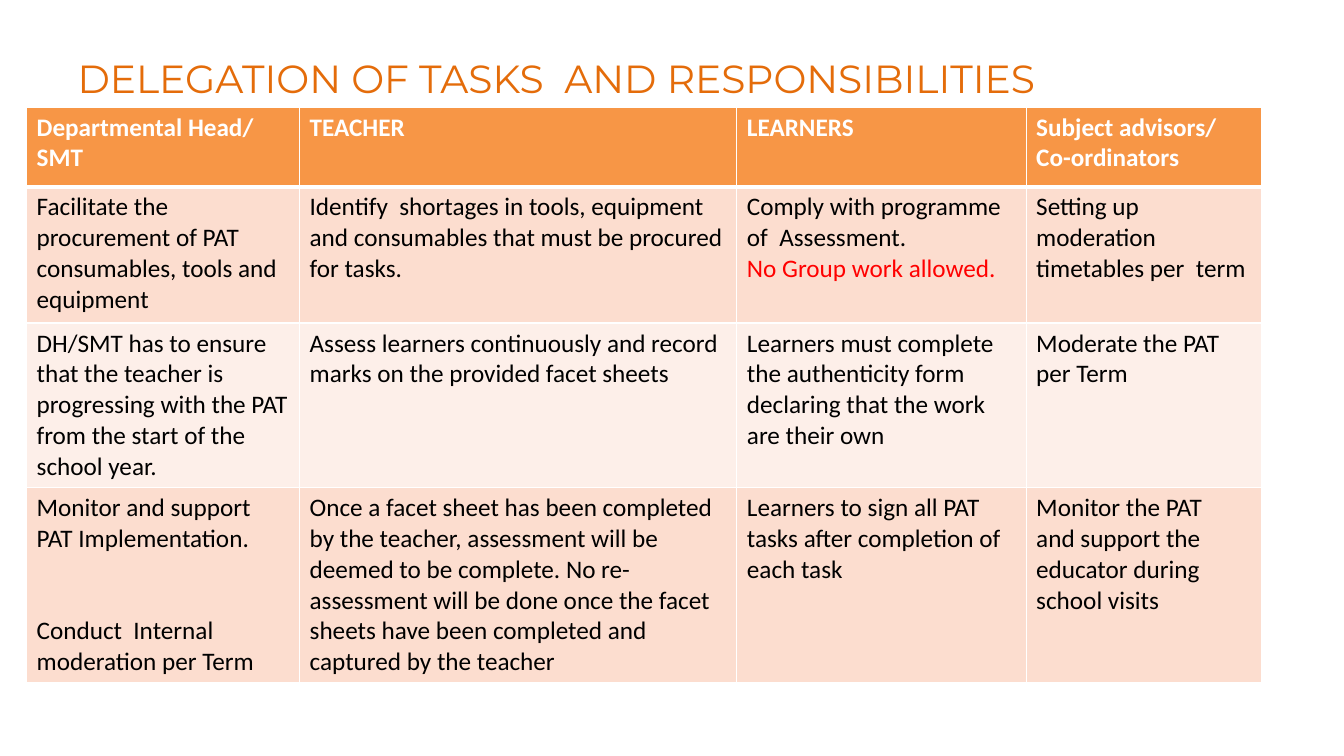
from lxml.etree import SubElement
from pptx import Presentation
from pptx.dml.color import RGBColor
from pptx.enum.text import MSO_ANCHOR, PP_ALIGN
from pptx.oxml.ns import qn
from pptx.util import Cm, Pt

WHITE = RGBColor(0xFF, 0xFF, 0xFF)
BLACK = RGBColor(0, 0, 0)
RED = RGBColor(0xFF, 0, 0)
TITLE_ORANGE = RGBColor(0xE4, 0x6C, 0x0A)
HEADER_ORANGE = RGBColor(0xF7, 0x96, 0x46)
BAND_DARK = RGBColor(0xFC, 0xDD, 0xCF)
BAND_LIGHT = RGBColor(0xFD, 0xEF, 0xE9)

WARNING = "No Group work allowed."
INTERNAL = "Conduct  Internal moderation per Term"
HEADERS = ["Departmental Head/ SMT", "TEACHER", "LEARNERS",
           "Subject advisors/ Co-ordinators"]
TASKS = [
    ["Facilitate the procurement of PAT consumables, tools and equipment",
     "Identify  shortages in tools, equipment and consumables that must be "
     "procured for tasks.",
     "Comply with programme of  Assessment.\n" + WARNING,
     "Setting up moderation timetables per  term"],
    ["DH/SMT has to ensure that the teacher is progressing with the PAT from "
     "the start of the school year.",
     "Assess learners continuously and record marks on the provided facet sheets",
     "Learners must complete the authenticity form declaring that the work are "
     "their own",
     "Moderate the PAT per Term"],
    ["Monitor and support PAT Implementation.\n" + INTERNAL,
     "Once a facet sheet has been completed by the teacher, assessment will be "
     "deemed to be complete. No re-assessment will be done once the facet sheets "
     "have been completed and captured by the teacher",
     "Learners to sign all PAT tasks after completion of each task",
     "Monitor the PAT\nand support the educator during school visits"],
]
COLUMN_WIDTHS = [Cm(6.88), Cm(11.02), Cm(7.29), Cm(5.94)]
ROW_HEIGHTS = [Cm(2.01), Cm(3.43), Cm(4.15), Cm(4.9)]


def write(tf, text, size=18, font="Calibri", color=BLACK, bold=False):
    """Write one paragraph for each line of text."""
    tf.text = text
    for p in tf.paragraphs:
        p.alignment = PP_ALIGN.LEFT
        p.font.size = Pt(size)
        for r in p.runs:
            r.font.name = font
            r.font.size = Pt(size)
            r.font.bold = bold
            r.font.color.rgb = RED if r.text == WARNING else color
        if p.text == INTERNAL:
            p.space_before = Pt(44)


def set_borders(cell, top=1, bottom=1):
    tcPr = cell._tc.get_or_add_tcPr()
    for side, width in (("L", 1), ("R", 1), ("T", top), ("B", bottom)):
        ln = SubElement(tcPr, qn(f"a:ln{side}"), w=str(Pt(width)))
        fill = SubElement(ln, qn("a:solidFill"))
        SubElement(fill, qn("a:srgbClr"), val=str(WHITE))


def add_title(slide, left, top, width, height):
    title = slide.shapes.title
    title.left, title.top, title.width, title.height = left, top, width, height
    tf = title.text_frame
    tf.word_wrap = True
    tf.vertical_anchor = MSO_ANCHOR.MIDDLE
    write(tf, "DELEGATION OF TASKS  AND RESPONSIBILITIES", size=28,
          font="Montserrat", color=TITLE_ORANGE)


def add_task_table(slide, left, top):
    rows = [HEADERS] + TASKS
    table = slide.shapes.add_table(len(rows), len(HEADERS), left, top,
                                   sum(COLUMN_WIDTHS), sum(ROW_HEIGHTS)).table
    for column, width in zip(table.columns, COLUMN_WIDTHS):
        column.width = width
    for i, texts in enumerate(rows):
        table.rows[i].height = ROW_HEIGHTS[i]
        header = i == 0
        band = BAND_DARK if i % 2 else BAND_LIGHT
        for j, text in enumerate(texts):
            cell = table.cell(i, j)
            set_borders(cell, top=3 if i == 1 else 1, bottom=3 if header else 1)
            cell.fill.solid()
            cell.fill.fore_color.rgb = HEADER_ORANGE if header else band
            write(cell.text_frame, text, color=WHITE if header else BLACK,
                  bold=header)


def main():
    prs = Presentation()
    prs.slide_width, prs.slide_height = Cm(33.87), Cm(19.05)
    slide = prs.slides.add_slide(prs.slide_layouts[5])
    add_title(slide, Cm(1.7), Cm(0.76), Cm(30.48), Cm(2.41))
    add_task_table(slide, Cm(0.67), Cm(2.7))
    prs.save("out.pptx")


if __name__ == "__main__":
    main()
